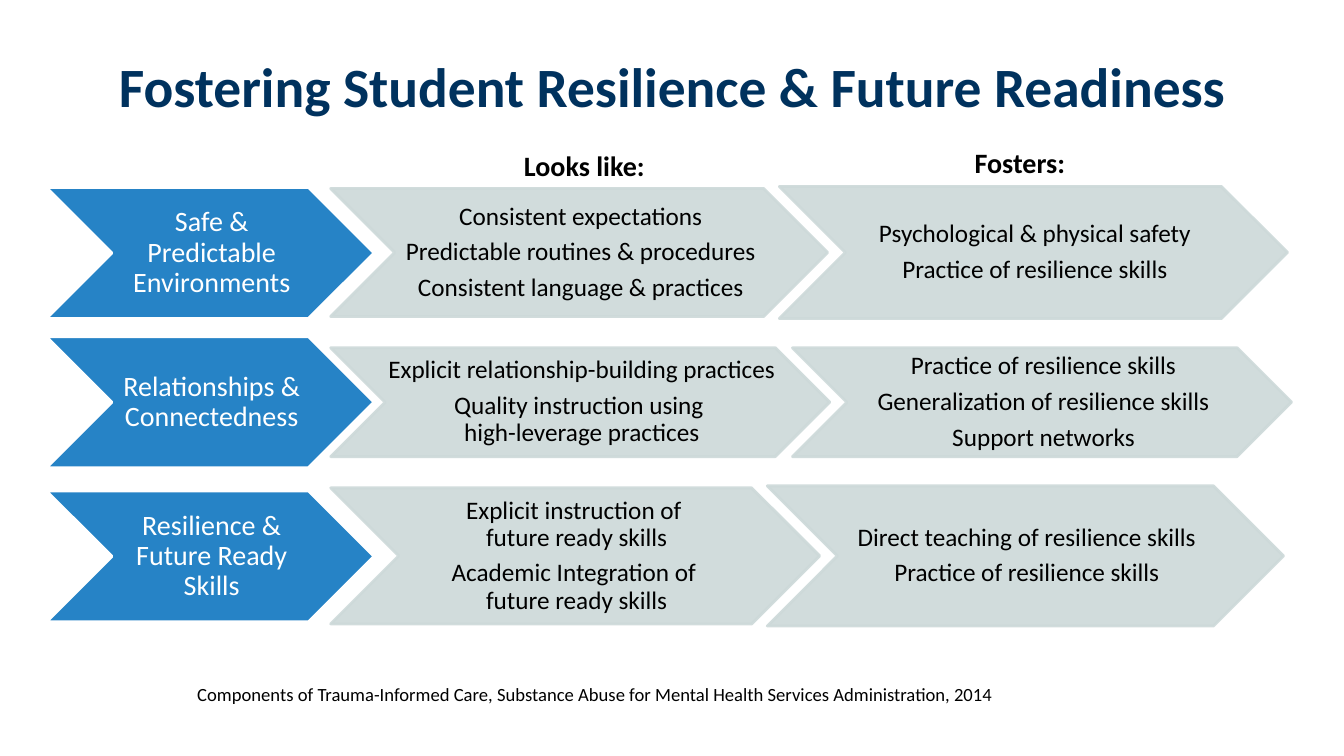
from lxml import etree
from pptx import Presentation
from pptx.dml.color import RGBColor
from pptx.enum.shapes import MSO_SHAPE
from pptx.enum.text import MSO_ANCHOR, MSO_AUTO_SIZE, PP_ALIGN
from pptx.oxml.ns import qn
from pptx.util import Pt

PX = 9144  # 100 px to the inch
NAVY = RGBColor(0x00, 0x32, 0x5E)
BLUE = RGBColor(0x26, 0x83, 0xC6)
GREY = RGBColor(0xCD, 0xD9, 0xD9)
WHITE = RGBColor(0xFF, 0xFF, 0xFF)
BLACK = RGBColor(0x00, 0x00, 0x00)

COMPONENT_LEFT, COMPONENT_WIDTH, COMPONENT_HEIGHT = 46, 325, 130
LOOKS_LIKE_LEFT = 328

# Each row: component top and name, then (left, top, width, height) and
# paragraphs for what it looks like and for what it fosters.
ROWS = [
    (186, "Safe & Predictable Environments",
     (LOOKS_LIKE_LEFT, 187, 493, 127),
     ["Consistent expectations", "Predictable routines & procedures",
      "Consistent language & practices"],
     (773, 185, 504, 131),
     ["Psychological & physical safety", "Practice of resilience skills"]),
    (334, "Relationships & Connectedness",
     (LOOKS_LIKE_LEFT, 345, 495, 108),
     ["Explicit relationship-building practices",
      "Quality instruction using \nhigh-leverage practices"],
     (786, 345, 495, 108),
     ["Practice of resilience skills", "Generalization of resilience skills",
      "Support networks"]),
    (487, "Resilience & Future Ready Skills",
     (LOOKS_LIKE_LEFT, 484, 485, 135),
     ["Explicit instruction of \nfuture ready skills",
      "Academic Integration of \nfuture ready skills"],
     (761, 482, 512, 139),
     ["Direct teaching of resilience skills", "Practice of resilience skills"]),
]


def to_emu(box):
    return [length * PX for length in box]


def write_paragraph(paragraph, text, size, color, bold=False, align=PP_ALIGN.CENTER):
    paragraph.text = text
    paragraph.alignment = align
    for run in paragraph.runs:
        run.font.name = "Calibri"
        run.font.size = Pt(size)
        run.font.bold = bold
        run.font.color.rgb = color


def set_opacity(shape, percent):
    """Make the solid fill and the solid line of a shape partly transparent."""
    for color in shape._element.spPr.iter(qn("a:srgbClr")):
        etree.SubElement(color, qn("a:alpha")).set("val", str(percent * 1000))


def add_chevron(slide, box, paragraphs, size, fill, line, text_color):
    shape = slide.shapes.add_shape(MSO_SHAPE.CHEVRON, *to_emu(box))
    shape.shadow.inherit = False
    shape.fill.solid()
    shape.fill.fore_color.rgb = fill
    shape.line.color.rgb = line
    shape.line.width = Pt(2)

    frame = shape.text_frame
    frame.word_wrap = True
    frame.vertical_anchor = MSO_ANCHOR.MIDDLE
    frame.margin_left, frame.margin_right = 3 * PX, 0
    frame.margin_top = frame.margin_bottom = PX
    frame.text = "\n".join("" for _ in paragraphs)
    for paragraph, text in zip(frame.paragraphs, paragraphs):
        write_paragraph(paragraph, text, size, text_color)
        paragraph.line_spacing = 0.9
        paragraph.space_after = Pt(6)
    return shape


def add_component(slide, top, name):
    box = (COMPONENT_LEFT, top, COMPONENT_WIDTH, COMPONENT_HEIGHT)
    add_chevron(slide, box, [name], 20, BLUE, WHITE, WHITE)


def add_details(slide, box, paragraphs):
    chevron = add_chevron(slide, box, paragraphs, 18, GREY, GREY, BLACK)
    set_opacity(chevron, 90)


def add_text(slide, box, text, size, color=BLACK, bold=False, align=PP_ALIGN.CENTER):
    frame = slide.shapes.add_textbox(*to_emu(box)).text_frame
    frame.word_wrap = True
    frame.auto_size = MSO_AUTO_SIZE.SHAPE_TO_FIT_TEXT
    write_paragraph(frame.paragraphs[0], text, size, color, bold, align)
    return frame


def add_title(slide, text):
    frame = add_text(slide, (70, 39, 1194, 100), text, 39.6, NAVY, bold=True)
    frame.auto_size = MSO_AUTO_SIZE.NONE
    frame.vertical_anchor = MSO_ANCHOR.MIDDLE
    frame.paragraphs[0].line_spacing = 0.9


def main():
    presentation = Presentation()
    presentation.slide_width, presentation.slide_height = to_emu((1333, 750))
    slide = presentation.slides.add_slide(presentation.slide_layouts[6])

    add_title(slide, "Fostering Student Resilience & Future Readiness")
    for top, component, looks_box, looks_like, fosters_box, fosters in ROWS:
        add_component(slide, top, component)
        add_details(slide, looks_box, looks_like)
        add_details(slide, fosters_box, fosters)
    add_text(slide, (420, 142, 319, 44), "Looks like:", 20, bold=True)
    add_text(slide, (852, 139, 319, 44), "Fosters:", 20, bold=True)
    add_text(slide, (80, 673, 915, 33),
             "Components of Trauma-Informed Care, Substance Abuse for "
             "Mental Health Services Administration, 2014",
             13.3, align=PP_ALIGN.RIGHT)

    presentation.save("out.pptx")


if __name__ == "__main__":
    main()
